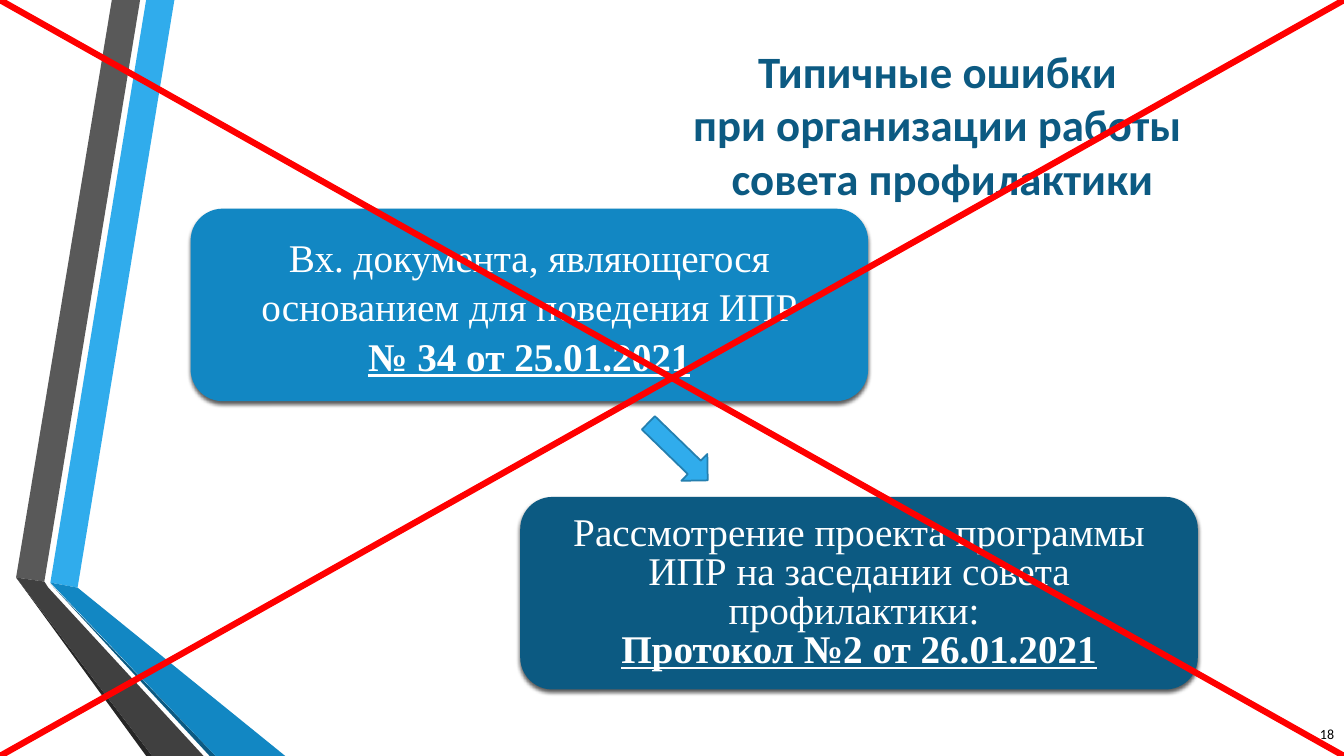
from dataclasses import dataclass

from lxml import etree
from pptx import Presentation
from pptx import util as u
from pptx.dml.color import RGBColor
from pptx.enum import shapes, text
from pptx.oxml import ns


@dataclass(frozen=True)
class Theme:
    sky: str = "30ACEC"
    blue: str = "1287C3"
    navy: str = "0C5A82"
    arrow_edge: str = "247FAF"
    grey: str = "595959"
    dark_grey: str = "404040"
    near_black: str = "262626"
    black: str = "000000"
    white: str = "FFFFFF"
    red: str = "FF0000"
    sans: str = "Calibri"
    serif: str = "Times New Roman"
    title_size: int = 32
    card_size: int = 28
    number_size: int = 10
    cross_width: float = 4.5
    arrow_line: float = 1.25


THEME = Theme()
SLIDE_BOX = (0, 0, 13.33, 7.5)
RIBBONS = [
    (THEME.sky, [(0.34, 5.78), (0.61, 5.83), (1.57, 0), (1.29, 0)]),
    (THEME.grey, [(1.23, 0), (0.95, 0), (0, 5.73), (0.28, 5.77)]),
    (THEME.near_black, [(0, 5.73), (1.29, 7.5), (1.35, 7.5)]),
    (THEME.navy, [(0.34, 5.79), (1.92, 7.5), (1.98, 7.5)]),
    (THEME.blue, [(0.34, 5.78), (1.98, 7.5), (2.67, 7.5), (0.61, 5.83)]),
    (THEME.dark_grey, [(1.86, 7.5), (0.32, 5.83), (0.28, 5.77), (0, 5.73), (1.35, 7.5)]),
]


def inches(box):
    return [u.Inches(length) for length in box]


def paint(shape, color):
    shape.shadow.inherit = False
    shape.fill.solid()
    shape.fill.fore_color.rgb = RGBColor.from_string(color)
    shape.line.fill.background()


def add_run(paragraph, words, font, size, color, bold=False, underline=False):
    run = paragraph.add_run()
    run.text = words
    run.font.name = font
    run.font.size = u.Pt(size)
    run.font.color.rgb = RGBColor.from_string(color)
    run.font.bold = bold
    run.font.underline = underline


def add_ribbons(slide, box):
    left, top = box[:2]
    for color, corners in RIBBONS:
        points = [(u.Inches(left + x), u.Inches(top + y)) for x, y in corners]
        builder = slide.shapes.build_freeform(*points[0], scale=1.0)
        builder.add_line_segments(points[1:], close=True)
        paint(builder.convert_to_shape(), color)


def add_caption(slide, box, lines, align, font_options):
    frame = slide.shapes.add_textbox(*inches(box)).text_frame
    frame.word_wrap = True
    frame.vertical_anchor = text.MSO_ANCHOR.MIDDLE
    paragraph = frame.paragraphs[0]
    paragraph.alignment = align
    for index, line in enumerate(lines):
        if index:
            paragraph.add_line_break()
        add_run(paragraph, line, THEME.sans, *font_options)


def add_card_shadow(card):
    effects = card._element.spPr.find(ns.qn("a:effectLst"))
    shadow = etree.SubElement(
        effects, ns.qn("a:outerShdw"), blurRad=str(u.Pt(3)), dist=str(u.Pt(2)),
        dir="5400000", rotWithShape="0")
    color = etree.SubElement(shadow, ns.qn("a:srgbClr"), val=THEME.black)
    etree.SubElement(color, ns.qn("a:alpha"), val="64000")


def add_card(slide, box, color, description, reference, spacing):
    card = slide.shapes.add_shape(shapes.MSO_SHAPE.ROUNDED_RECTANGLE, *inches(box))
    paint(card, color)
    add_card_shadow(card)
    frame = card.text_frame
    frame.word_wrap = True
    frame.vertical_anchor = text.MSO_ANCHOR.MIDDLE
    frame.margin_left = frame.margin_right = u.Inches(0.3)
    for index, words in enumerate((description, reference)):
        paragraph = frame.add_paragraph() if index else frame.paragraphs[0]
        paragraph.alignment = text.PP_ALIGN.CENTER
        paragraph.line_spacing = spacing
        emphasis = index == 1
        add_run(paragraph, words, THEME.serif, THEME.card_size, THEME.white, emphasis, emphasis)


def add_step_arrow(slide, box):
    arrow = slide.shapes.add_shape(shapes.MSO_SHAPE.DOWN_ARROW, *inches(box))
    paint(arrow, THEME.sky)
    arrow.rotation = 314.1
    arrow.line.color.rgb = RGBColor.from_string(THEME.arrow_edge)
    arrow.line.width = u.Pt(THEME.arrow_line)


def add_cross(slide, box):
    left, top, width, height = box
    right, bottom = left + width, top + height
    for ends in ((left, top, right, bottom), (right, top, left, bottom)):
        stroke = slide.shapes.add_connector(shapes.MSO_CONNECTOR.STRAIGHT, *inches(ends))
        stroke.line.color.rgb = RGBColor.from_string(THEME.red)
        stroke.line.width = u.Pt(THEME.cross_width)
        etree.SubElement(stroke._element.spPr, ns.qn("a:effectLst"))


def main():
    deck = Presentation()
    deck.slide_width, deck.slide_height = inches(SLIDE_BOX[2:])
    slide = deck.slides.add_slide(deck.slide_layouts[6])

    add_ribbons(slide, (0.16, 0, 2.67, 7.5))
    add_caption(
        slide, (6.03, 0.77, 6.64, 0.92),
        ["Типичные ошибки ", "при организации работы ", "совета профилактики"],
        text.PP_ALIGN.CENTER, (THEME.title_size, THEME.navy, True))
    add_caption(
        slide, (10.33, 7.08, 3, 0.4), ["18"],
        text.PP_ALIGN.RIGHT, (THEME.number_size, THEME.black))
    add_card(
        slide, (1.89, 2.07, 6.72, 1.91), THEME.blue,
        "Вх. документа, являющегося основанием для поведения ИПР",
        "№ 34 от 25.01.2021", 1.05)
    add_card(
        slide, (5.16, 4.93, 6.72, 1.91), THEME.navy,
        "Рассмотрение проекта программы ИПР на заседании совета профилактики: ",
        "Протокол №2 от 26.01.2021", u.Pt(28))
    add_step_arrow(slide, (6.54, 4.07, 0.37, 0.82))
    add_cross(slide, SLIDE_BOX)

    deck.save("out.pptx")


if __name__ == "__main__":
    main()
